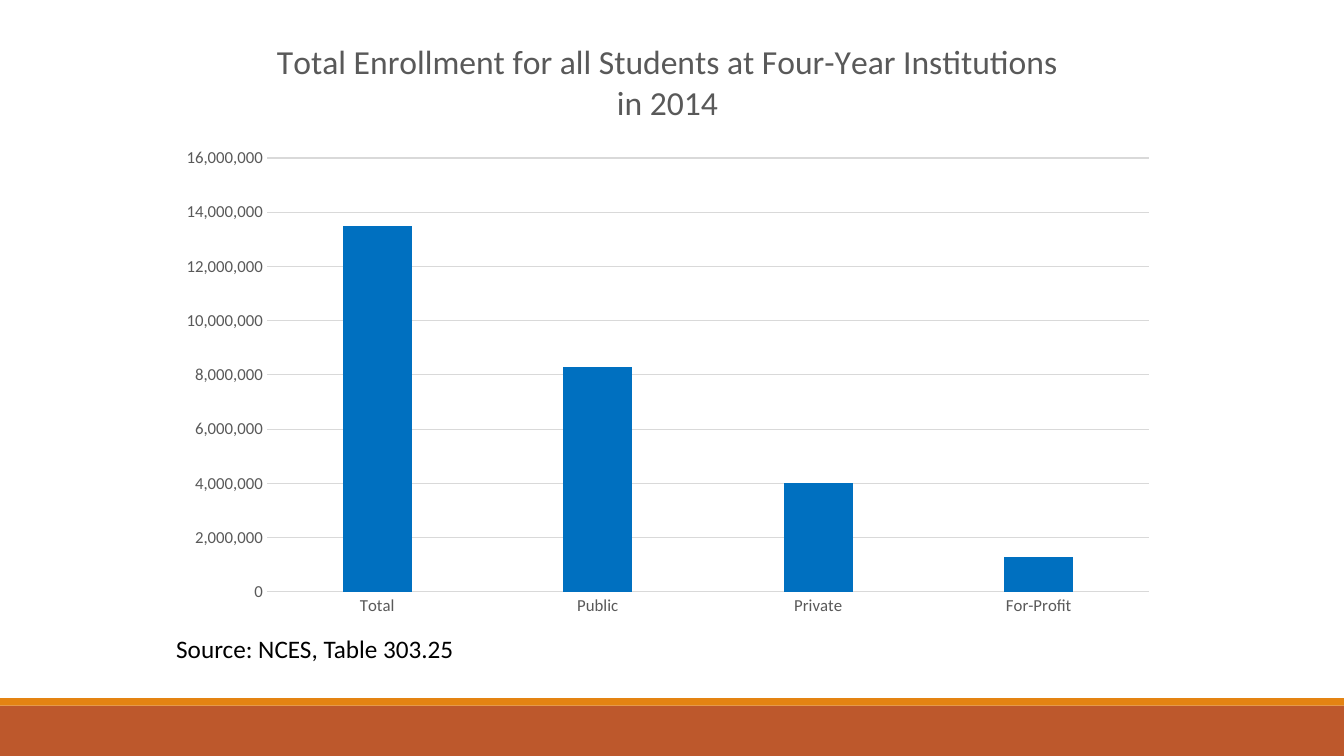
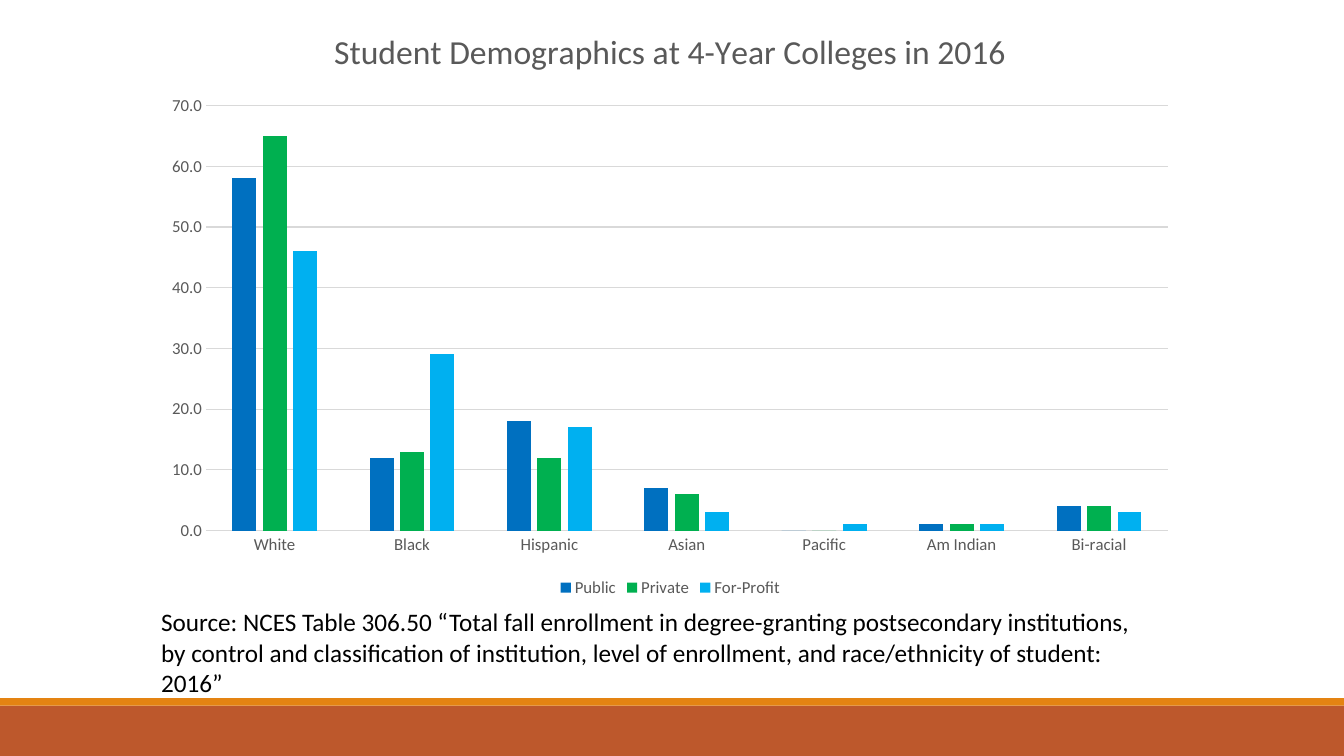
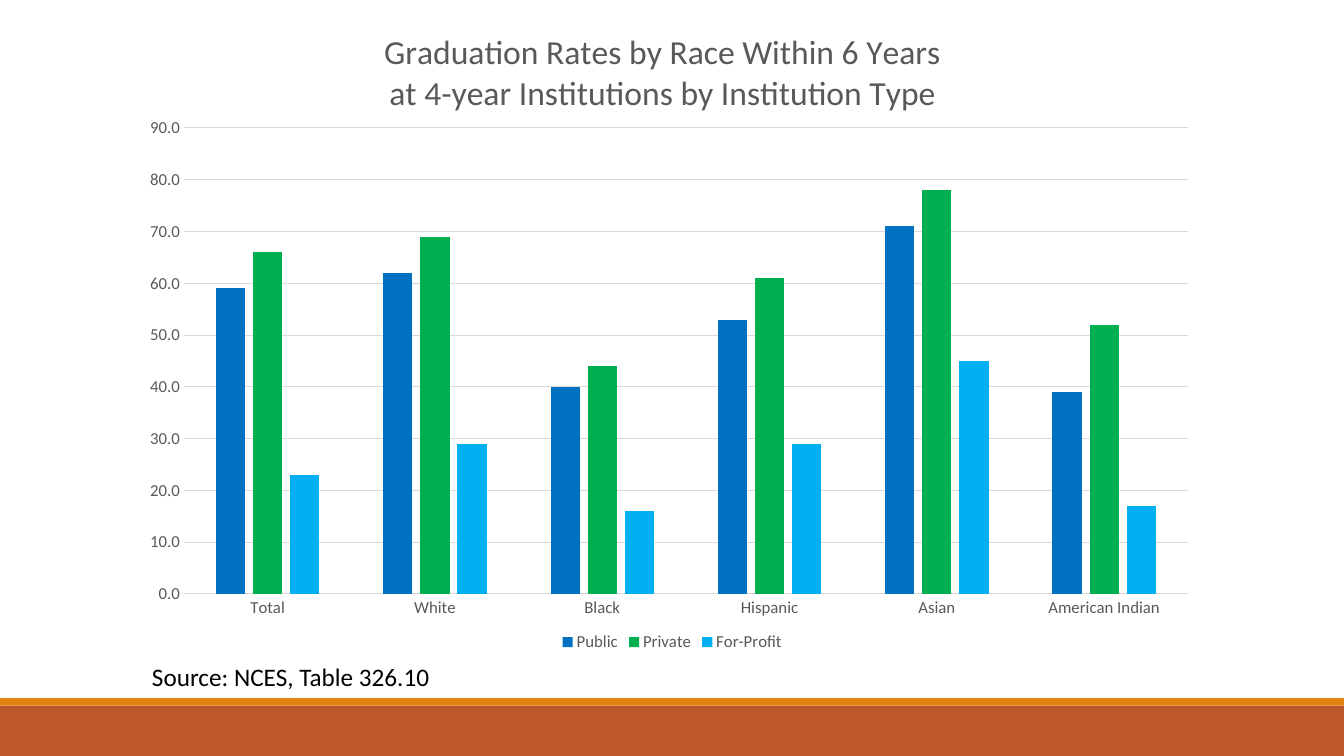
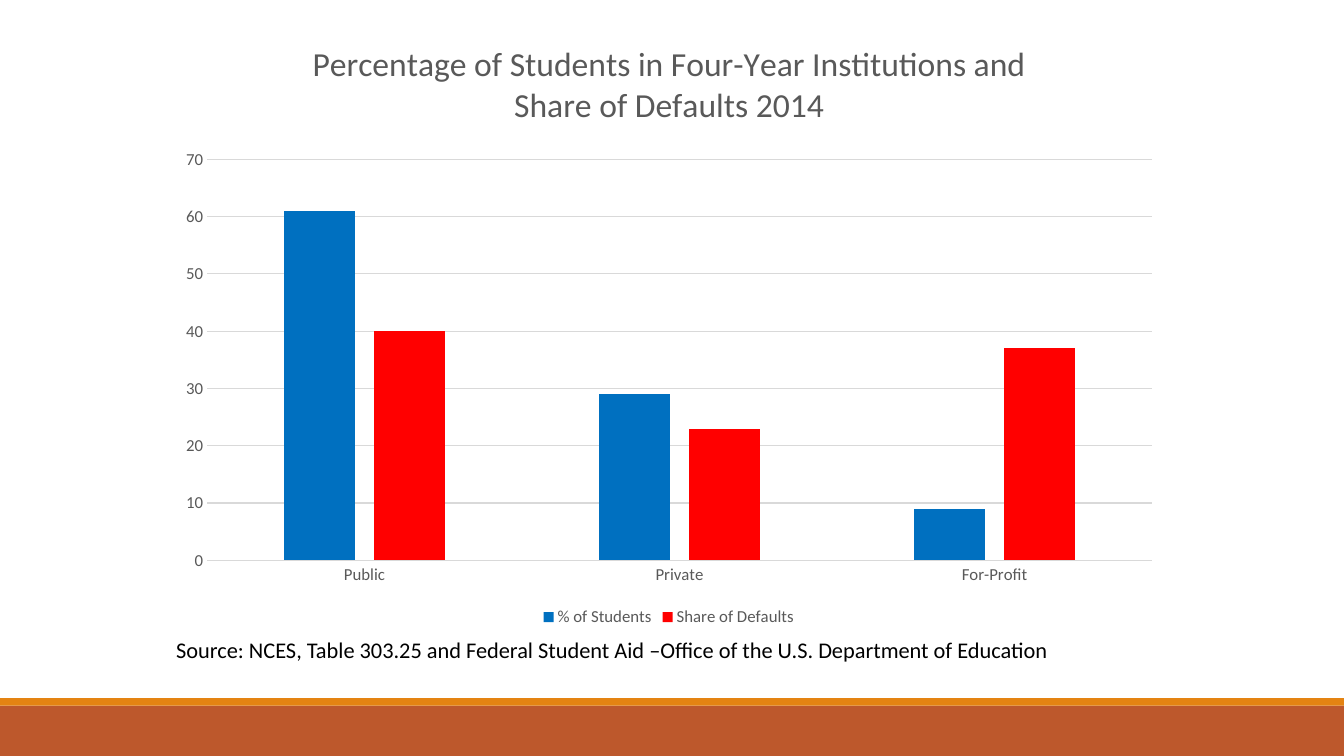
from pptx import Presentation
from pptx.chart.data import CategoryChartData
from pptx.dml.color import RGBColor
from pptx.enum.chart import XL_CHART_TYPE, XL_LEGEND_POSITION, XL_TICK_MARK
from pptx.enum.shapes import MSO_SHAPE
from pptx.oxml import parse_xml
from pptx.oxml.ns import nsdecls, qn
from pptx.util import Pt

COLUMNS = XL_CHART_TYPE.COLUMN_CLUSTERED
BOTTOM = XL_LEGEND_POSITION.BOTTOM
NO_TICK = XL_TICK_MARK.NONE
RECTANGLE = MSO_SHAPE.RECTANGLE

FONT = "Calibri"
BLANK_LAYOUT = 6
WIDTH, HEIGHT = 960, 540
COLORS = {
    "rust": "BD582C", "orange": "E48312", "black": "000000",
    "gray": "595959", "rule": "D9D9D9",
    "blue": "0070C0", "green": "00B050", "sky": "00B0F0", "red": "FF0000",
}

# Top, height, colour
BANDS = [(504, 36, "rust"), (498.7, 5.3, "orange")]

# "chart" and "plot" are left, top, width, height on the page; "title_at" is left, top;
# "axis" is maximum, step, number format; "source_size" is width, height.
SLIDES = [
    {
        "title": ["Total Enrollment for all Students at Four-Year Institutions in 2014"],
        "title_at": (193.5, 23.7),
        "chart": (118.8, 19.4, 715.7, 429.1),
        "plot": (190.7, 112.9, 630, 310),
        "axis": (16000000, 2000000, "#,##0"),
        "categories": ["Total", "Public", "Private", "For-Profit"],
        "series": [("Series 1", "blue", [13500000, 8300000, 4000000, 1300000])],
        "legend": False,
        "source": "Source: NCES, Table 303.25",
        "source_size": (523.4, 28.8),
        "font_size": 18,
    },
    {
        "title": ["Student Demographics at 4-Year Colleges in 2016"],
        "title_at": (234.4, 16.3),
        "chart": (108, 11.5, 741.6, 418.3),
        "plot": (147.1, 75.4, 687.1, 303.6),
        "axis": (70, 10, "0.0"),
        "categories": ["White", "Black", "Hispanic", "Asian", "Pacific", "Am Indian", "Bi-racial"],
        "series": [
            ("Public", "blue", [58, 12, 18, 7, 0, 1, 4]),
            ("Private", "green", [65, 13, 12, 6, 0, 1, 4]),
            ("For-Profit", "sky", [46, 29, 17, 3, 1, 1, 3]),
        ],
        "legend": True,
        "source": "Source: NCES Table 306.50 “Total fall enrollment in degree-granting "
                  "postsecondary institutions, by control and classification of institution, "
                  "level of enrollment, and race/ethnicity of student: 2016”",
        "source_size": (717.8, 72.7),
        "font_size": 18,
    },
    {
        "title": ["Graduation Rates by Race Within 6 Years",
                  "at 4-year Institutions by Institution Type"],
        "title_at": (272.3, 19.9),
        "chart": (101.5, 14.4, 757.4, 454.3),
        "plot": (131.4, 91.4, 717.1, 332.9),
        "axis": (90, 10, "0.0"),
        "categories": ["Total", "White", "Black", "Hispanic", "Asian", "American Indian"],
        "series": [
            ("Public", "blue", [59, 62, 40, 53, 71, 39]),
            ("Private", "green", [66, 69, 44, 61, 78, 52]),
            ("For-Profit", "sky", [23, 29, 16, 29, 45, 17]),
        ],
        "legend": True,
        "source": "Source: NCES, Table 326.10",
        "source_size": (558.7, 28.8),
        "font_size": 18,
    },
    {
        "title": ["Percentage of Students in Four-Year Institutions and Share of Defaults 2014"],
        "title_at": (218.9, 25.2),
        "chart": (118.8, 20.2, 717.8, 430.6),
        "plot": (147.9, 113.9, 675, 286.4),
        "axis": (70, 10, "0"),
        "categories": ["Public", "Private", "For-Profit"],
        "series": [
            ("% of Students", "blue", [61, 29, 9]),
            ("Share of Defaults", "red", [40, 23, 37]),
        ],
        "legend": True,
        "source": "Source: NCES, Table 303.25 and Federal Student Aid –Office of the U.S. "
                  "Department of Education",
        "source_size": (733.7, 26.6),
        "font_size": 16,
    },
]


def rgb(name):
    return RGBColor.from_string(COLORS[name])


def style_font(font, size, color):
    font.name = FONT
    font.size = Pt(size)
    font.bold = False
    font.color.rgb = rgb(color)


def add_bands(page):
    """Draw the bottom bands and move them to the layout that all slides share."""
    layout_tree = page.slide_layout.shapes.element
    for top, height, color in BANDS:
        band = page.shapes.add_shape(RECTANGLE, 0, Pt(top), Pt(WIDTH), Pt(height))
        band.shadow.inherit = False
        band.fill.solid()
        band.fill.fore_color.rgb = rgb(color)
        band.line.fill.background()
        layout_tree.append(band.element)


def add_text(page, text, left, top, width, height, size, color="black"):
    box = page.shapes.add_textbox(Pt(left), Pt(top), Pt(width), Pt(height))
    box.text_frame.word_wrap = True
    span = box.text_frame.paragraphs[0].add_run()
    span.text = text
    style_font(span.font, size, color)


def layout_xml(frame, left, top, size=None):
    """Turn page points into a chart layout, given as fractions of the chart frame."""
    fractions = {"x": (left - frame[0]) / frame[2], "y": (top - frame[1]) / frame[3]}
    target = ""
    if size:
        target = '<c:layoutTarget val="inner"/>'
        fractions.update(w=size[0] / frame[2], h=size[1] / frame[3])
    parts = "".join(f'<c:{key} val="{value:.4f}"/>' for key, value in fractions.items())
    return parse_xml(
        f'<c:layout {nsdecls("c")}><c:manualLayout>{target}'
        f'<c:xMode val="edge"/><c:yMode val="edge"/>{parts}</c:manualLayout></c:layout>')


def place_parts(chart, frame, plot, title_at):
    area = chart.plots[0]._element.getparent()
    title = chart.chart_title._element
    for parent in (area, title):
        for old in parent.findall(qn("c:layout")):
            parent.remove(old)
    area.insert(0, layout_xml(frame, *plot[:2], size=plot[2:]))
    title.find(qn("c:tx")).addnext(layout_xml(frame, *title_at))


def style_axes(chart, maximum, step, number_format):
    for axis in (chart.category_axis, chart.value_axis):
        axis.major_tick_mark = axis.minor_tick_mark = NO_TICK
        style_font(axis.tick_labels.font, 12, "gray")
    values = chart.value_axis
    values.minimum_scale, values.maximum_scale, values.major_unit = 0, maximum, step
    values.tick_labels.number_format = number_format
    values.tick_labels.number_format_is_linked = False
    values.format.line.fill.background()
    for line in (chart.category_axis.format.line, values.major_gridlines.format.line):
        line.color.rgb = rgb("rule")
        line.width = Pt(0.75)


def add_title(chart, lines):
    frame = chart.chart_title.text_frame
    for index, text in enumerate(lines):
        para = frame.add_paragraph() if index else frame.paragraphs[0]
        span = para.add_run()
        span.text = text
        style_font(span.font, 24, "gray")


def add_column_chart(page, content):
    data = CategoryChartData()
    data.categories = content["categories"]
    for name, _, values in content["series"]:
        data.add_series(name, values)
    frame = content["chart"]
    chart = page.shapes.add_chart(COLUMNS, *map(Pt, frame), data).chart
    style_font(chart.font, 10, "black")
    add_title(chart, content["title"])
    style_axes(chart, *content["axis"])

    plot = chart.plots[0]
    plot.gap_width, plot.overlap, plot.vary_by_categories = 219, -27, False
    for series, (_, color, _) in zip(plot.series, content["series"]):
        series.format.fill.solid()
        series.format.fill.fore_color.rgb = rgb(color)

    chart.has_legend = content["legend"]
    if content["legend"]:
        chart.legend.position = BOTTOM
        chart.legend.include_in_layout = False
        style_font(chart.legend.font, 12, "gray")
    place_parts(chart, frame, content["plot"], content["title_at"])


def main():
    deck = Presentation()
    deck.slide_width, deck.slide_height = Pt(WIDTH), Pt(HEIGHT)
    layout = deck.slide_layouts[BLANK_LAYOUT]
    for index, content in enumerate(SLIDES):
        page = deck.slides.add_slide(layout)
        if index == 0:
            add_bands(page)
        add_column_chart(page, content)
        left, top, _, height = content["chart"]
        add_text(page, content["source"], left, top + height,
                 *content["source_size"], size=content["font_size"])
    deck.save("out.pptx")


if __name__ == "__main__":
    main()
